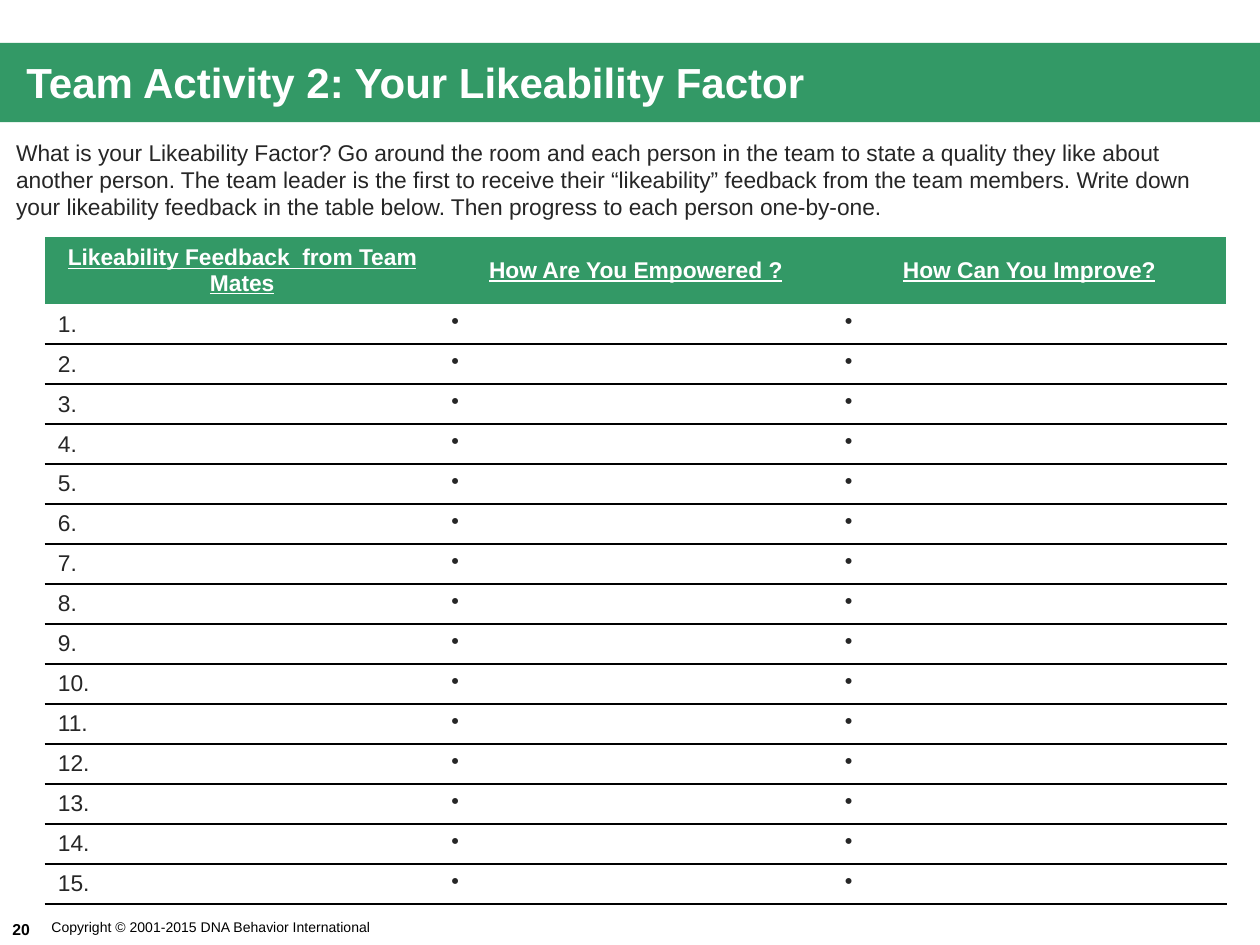
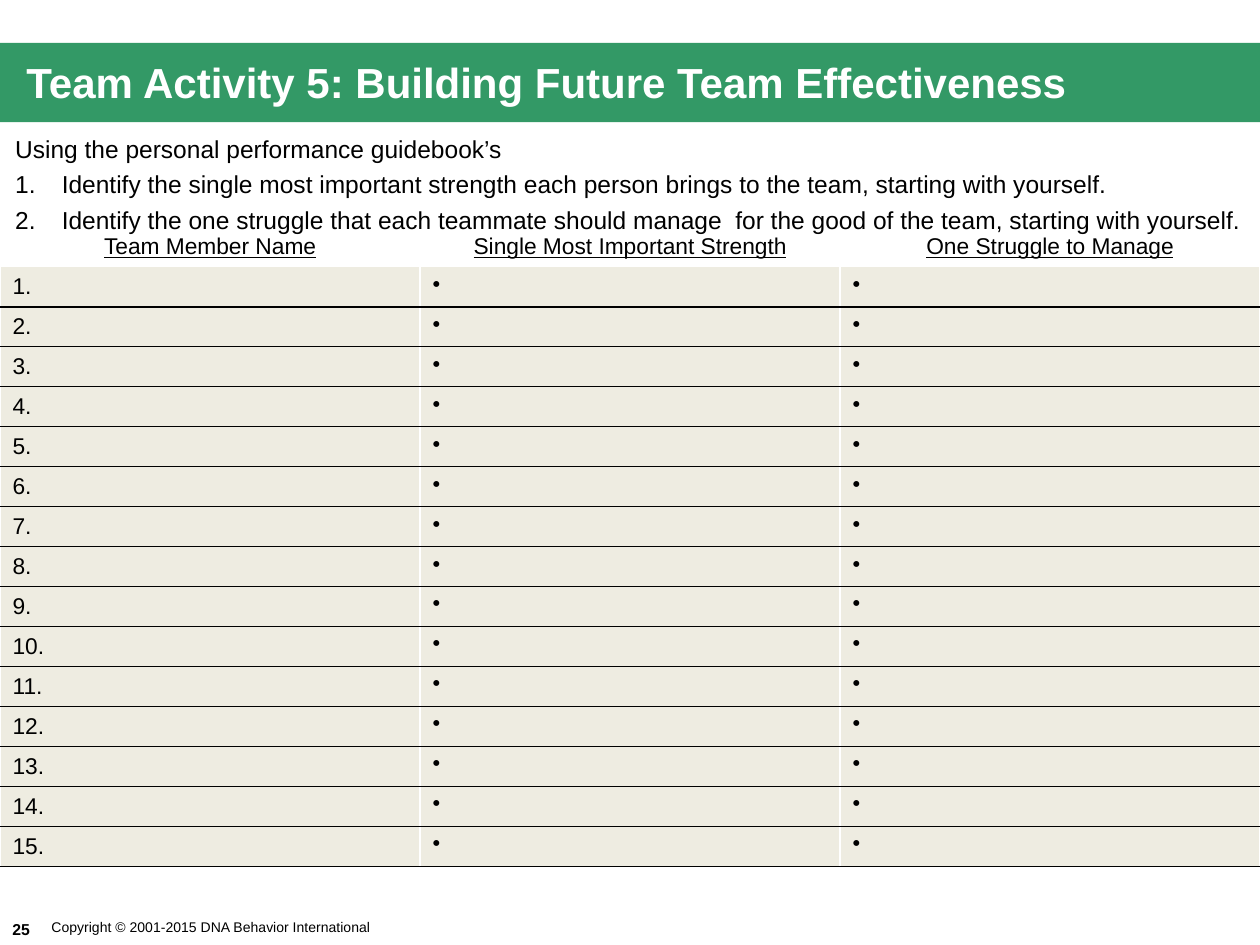
import pptx
import pptx.util
import pptx.dml.color
import pptx.enum.shapes
import pptx.enum.text
import pptx.oxml
import pptx.oxml.ns
from lxml import etree

Inches, Pt = pptx.util.Inches, pptx.util.Pt
ALIGN, ANCHOR = pptx.enum.text.PP_ALIGN, pptx.enum.text.MSO_ANCHOR
INK = {"green": "339966", "white": "FFFFFF", "black": "000000",
       "gray": "262626", "sand": "EEECE1"}
FONT = "Arial"
NO_STYLE = "{2D5ABB26-0587-4C30-8999-92F81FD0307C}"
COPY = "Copyright © 2001-2015 DNA Behavior International"
COUNT = 15

PAGES = [
    {"num": "20", "title": "Team Activity 2: Your Likeability Factor",
     "layout": 5, "list": False,
     "intro": ["What is your Likeability Factor? Go around the room and each person "
               "in the team to state a quality they like about another person. The "
               "team leader is the first to receive their “likeability” feedback from "
               "the team members. Write down your likeability feedback in the table "
               "below. Then progress to each person one-by-one."],
     "box": (0.03, 1.05, 9.87, 0.8), "size": 13, "ink": "gray",
     "heads": ["Likeability Feedback  from Team Mates", "How Are You Empowered ?",
               "How Can You Improve?"],
     "grid": (0.36, 1.88, 9.37, 5.22), "top": 0.53,
     "head": ("white", True, "green"), "fill": None},
    {"num": "25", "title": "Team Activity 5: Building Future Team Effectiveness",
     "layout": 1, "list": True,
     "intro": ["Using the personal performance guidebook’s",
               "Identify the single most important strength each person brings to "
               "the team, starting with yourself.",
               "Identify the one struggle that each teammate should manage  for the "
               "good of the team, starting with yourself."],
     "box": (0.12, 1.01, 9.88, 0.85), "size": 14, "ink": "black",
     "heads": ["Team Member Name", "Single Most Important Strength",
               "One Struggle to Manage"],
     "grid": (0, 1.8, 10, 5), "top": 0.31,
     "head": ("black", False, None), "fill": "sand"},
]


def write(para, text, size, ink, bold=False, line=False):
    run = para.add_run()
    run.text = text
    font = run.font
    font.name, font.size, font.bold, font.underline = FONT, Pt(size), bold, line
    font.color.rgb = pptx.dml.color.RGBColor.from_string(INK[ink])


def paint(cell, fill, lines):
    """Draw the cell borders, then its fill."""
    props = cell._tc.get_or_add_tcPr()
    for side, ink in lines:
        props.append(pptx.oxml.parse_xml(
            f'<a:{side} {pptx.oxml.ns.nsdecls("a")} w="12700"><a:solidFill>'
            f'<a:srgbClr val="{INK[ink]}"/></a:solidFill></a:{side}>'))
    if fill:
        cell.fill.solid()
        cell.fill.fore_color.rgb = pptx.dml.color.RGBColor.from_string(INK[fill])
    else:
        cell.fill.background()


deck = pptx.Presentation()
deck.slide_width, deck.slide_height = Inches(10), Inches(7.5)

for page in PAGES:
    slide = deck.slides.add_slide(deck.slide_layouts[page["layout"]])
    shapes = slide.shapes

    # Green band, behind the title
    band = shapes.add_shape(pptx.enum.shapes.MSO_SHAPE.RECTANGLE,
                            0, Inches(0.34), Inches(10), Inches(0.63))
    band.shadow.inherit = False
    band.fill.solid()
    band.fill.fore_color.rgb = pptx.dml.color.RGBColor.from_string(INK["green"])
    band.line.fill.background()
    shapes.element.insert(2, band.element)

    # Title
    title = shapes.title
    title.left, title.top = Inches(0), Inches(0.41)
    title.width, title.height = Inches(9.17), Inches(0.48)
    frame = title.text_frame
    frame.auto_size = pptx.enum.text.MSO_AUTO_SIZE.NONE
    frame.vertical_anchor = ANCHOR.MIDDLE
    frame.margin_left = frame.margin_right = frame.margin_top = frame.margin_bottom = 0
    para = frame.paragraphs[0]
    para.alignment = ALIGN.LEFT
    para._p.get_or_add_pPr().set("marL", str(Inches(0.21)))
    write(para, page["title"], 24, "white", True)

    # Footer: page number and copyright
    for text, box, size, bold, wrap in [
            (page["num"], (0, 7.25, 0.71, 0.25), 9, True, True),
            (COPY, (0.31, 7.24, 2.78, 0.24), 8, False, False)]:
        frame = shapes.add_textbox(*map(Inches, box)).text_frame
        frame.word_wrap = wrap
        frame.vertical_anchor = ANCHOR.MIDDLE
        write(frame.paragraphs[0], text, size, "black", bold)

    # Instructions
    box = [Inches(x) for x in page["box"]]
    if page["list"]:
        body = slide.placeholders[1]
        body.left, body.top, body.width, body.height = box
    else:
        body = shapes.add_textbox(*box)
    frame = body.text_frame
    frame.word_wrap = True
    frame.auto_size = pptx.enum.text.MSO_AUTO_SIZE.NONE
    frame.vertical_anchor = ANCHOR.TOP
    if page["list"]:
        frame.margin_left, frame.margin_right = 0, Inches(0.03)
    for i, text in enumerate(page["intro"]):
        para = frame.add_paragraph() if i else frame.paragraphs[0]
        props = para._p.get_or_add_pPr()
        dent = Inches(0.37) if i else 0
        props.set("marL", str(dent))
        props.set("indent", str(-dent))
        mark = etree.SubElement(
            props, pptx.oxml.ns.qn("a:buAutoNum" if i else "a:buNone"))
        if i:
            mark.set("type", "arabicPeriod")
        para.space_before = Pt(3.6 if i else 0)
        write(para, text, page["size"], page["ink"])

    # Table
    left, top, width, height = map(Inches, page["grid"])
    table = shapes.add_table(COUNT + 1, 3, left, top, width, height).table
    table.horz_banding = False
    table._tbl.tblPr.find(pptx.oxml.ns.qn("a:tableStyleId")).text = NO_STYLE
    for col in table.columns:
        col.width = width // 3
    for row in table.rows:
        row.height = (height - Inches(page["top"])) // COUNT
    table.rows[0].height = Inches(page["top"])

    ink, bold, fill = page["head"]
    for cell, text in zip(table.rows[0].cells, page["heads"]):
        paint(cell, fill, [])
        cell.vertical_anchor = ANCHOR.MIDDLE
        para = cell.text_frame.paragraphs[0]
        para.alignment = ALIGN.CENTER
        write(para, text, 13, ink, bold, True)

    for r in range(1, COUNT + 1):
        for c, cell in enumerate(table.rows[r].cells):
            paint(cell, page["fill"],
                  [("lnL", "white"), ("lnR", "white"), ("lnB", "black")])
            cell.vertical_anchor = ANCHOR.MIDDLE
            para = cell.text_frame.paragraphs[0]
            if c:
                # A bulleted line left open for writing
                mark = etree.SubElement(para._p.get_or_add_pPr(),
                                        pptx.oxml.ns.qn("a:buChar"))
                mark.set("char", "•")
            write(para, " " if c else f"{r}.", 13, page["ink"])

deck.save("out.pptx")
